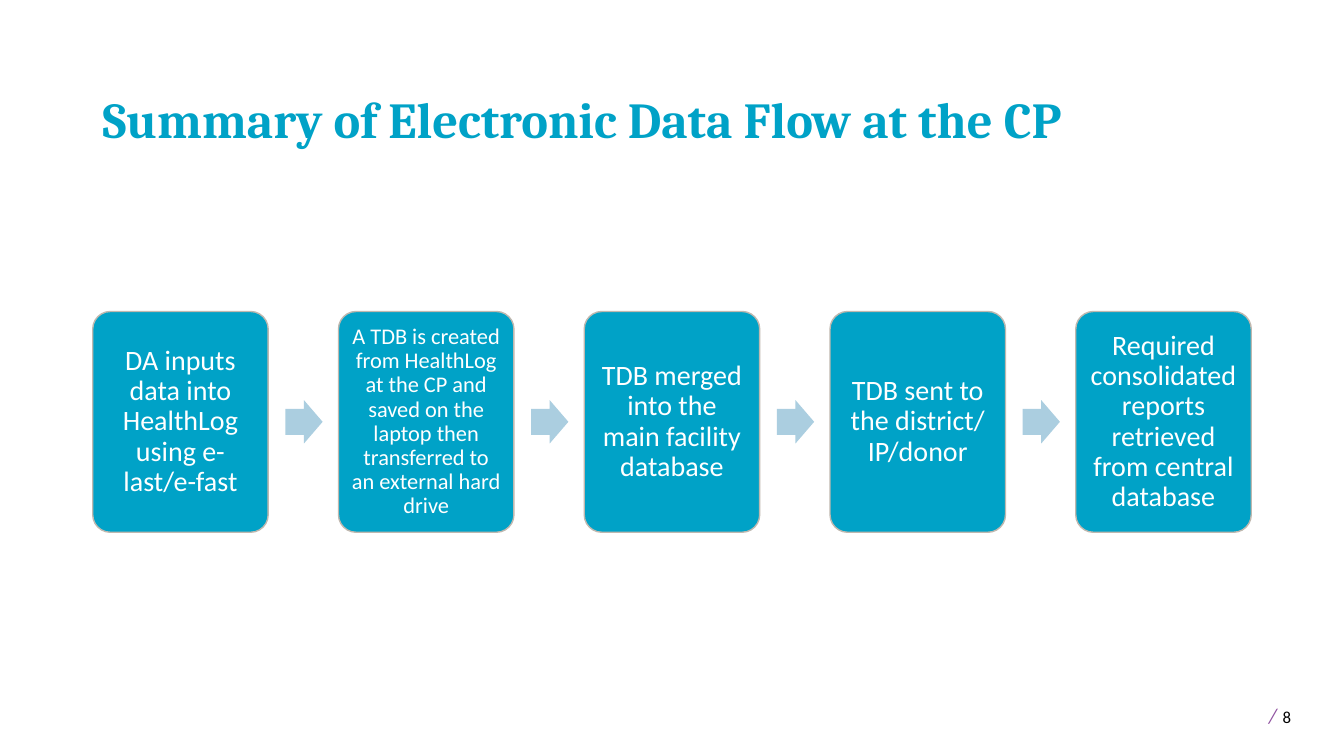
import pptx
import pptx.dml.color
import pptx.enum.shapes
import pptx.enum.text
import pptx.util

Inches = pptx.util.Inches
Pt = pptx.util.Pt
Shape = pptx.enum.shapes.MSO_SHAPE
Anchor = pptx.enum.text.MSO_ANCHOR
Align = pptx.enum.text.PP_ALIGN

COLORS = {
    "teal": "00A2C7",
    "border": "BFB8AF",
    "arrow": "ABCEE0",
    "white": "FFFFFF",
    "black": "000000",
    "purple": "9053A1",
}

STEPS = [
    ("DA inputs data into HealthLog using e-last/e-fast", 20, 0.08),
    ("A TDB is created from HealthLog at the CP and saved on the laptop "
     "then transferred to an external hard drive", 16, 0.07),
    ("TDB merged into the main facility database", 20, 0.08),
    ("TDB sent to the district/ IP/donor", 20, 0.08),
    ("Required consolidated reports retrieved from central database", 20, 0.08),
]


def color(name):
    return pptx.dml.color.RGBColor.from_string(COLORS[name])


def style(span, size, ink, face="Calibri"):
    span.font.name = face
    span.font.size = Pt(size)
    span.font.color.rgb = color(ink)


def add_filled(page, kind, left, top, width, height, fill, adjustments):
    shape = page.shapes.add_shape(
        kind, Inches(left), Inches(top), Inches(width), Inches(height))
    shape.shadow.inherit = False
    shape.fill.solid()
    shape.fill.fore_color.rgb = color(fill)
    shape.line.fill.background()
    for index, value in enumerate(adjustments):
        shape.adjustments[index] = value
    return shape


def add_title(page, left, top, width, height):
    box = page.shapes.add_textbox(
        Inches(left), Inches(top), Inches(width), Inches(height))
    frame = box.text_frame
    frame.word_wrap = True
    frame.vertical_anchor = Anchor.BOTTOM
    frame.text = "Summary of Electronic Data Flow at the CP"
    para = frame.paragraphs[0]
    para.line_spacing = 0.9
    style(para.runs[0], 36, "teal", "Cambria")
    para.runs[0].font.bold = True


def add_step(page, left, top, width, height, text, size, inset):
    card = add_filled(page, Shape.ROUNDED_RECTANGLE, left, top, width, height,
                      "teal", [0.1])
    card.line.color.rgb = color("border")
    card.line.width = Pt(1)
    frame = card.text_frame
    frame.word_wrap = True
    frame.vertical_anchor = Anchor.MIDDLE
    frame.margin_left = frame.margin_right = Inches(inset)
    frame.margin_top = frame.margin_bottom = Inches(inset)
    frame.text = text
    para = frame.paragraphs[0]
    para.alignment = Align.CENTER
    para.line_spacing = 0.9
    style(para.runs[0], size, "white")


def add_flow(page, left, top, width, height):
    card_width = 1.74
    arrow_width, arrow_height = 0.37, 0.43
    arrow_offset = card_width + 0.17
    pitch = (width - card_width) / (len(STEPS) - 1)
    for index, (text, size, inset) in enumerate(STEPS):
        card_left = left + index * pitch
        add_step(page, card_left, top, card_width, height, text, size, inset)
        if index < len(STEPS) - 1:
            add_filled(page, Shape.RIGHT_ARROW, card_left + arrow_offset,
                       top + (height - arrow_height) / 2,
                       arrow_width, arrow_height, "arrow", [0.6, 0.5])


def add_page_number(page, left, top, width, height):
    box = page.shapes.add_textbox(
        Inches(left), Inches(top), Inches(width), Inches(height))
    box.text_frame.word_wrap = True
    para = box.text_frame.paragraphs[0]
    for text, size, ink in [(" ", 18, "black"), ("/", 15, "purple"),
                            (" ", 18, "black"), ("8", 12, "black")]:
        span = para.add_run()
        span.text = text
        style(span, size, ink)
        span.font.italic = text == "/"


def main():
    deck = pptx.Presentation()
    deck.slide_width = Inches(13.33)
    deck.slide_height = Inches(7.5)
    page = deck.slides.add_slide(deck.slide_layouts[6])
    add_page_number(page, 12.43, 6.88, 0.87, 0.4)
    add_flow(page, 0.92, 3.09, 11.49, 2.19)
    add_title(page, 0.92, 0.4, 11.5, 1.13)
    deck.save("out.pptx")


if __name__ == "__main__":
    main()
